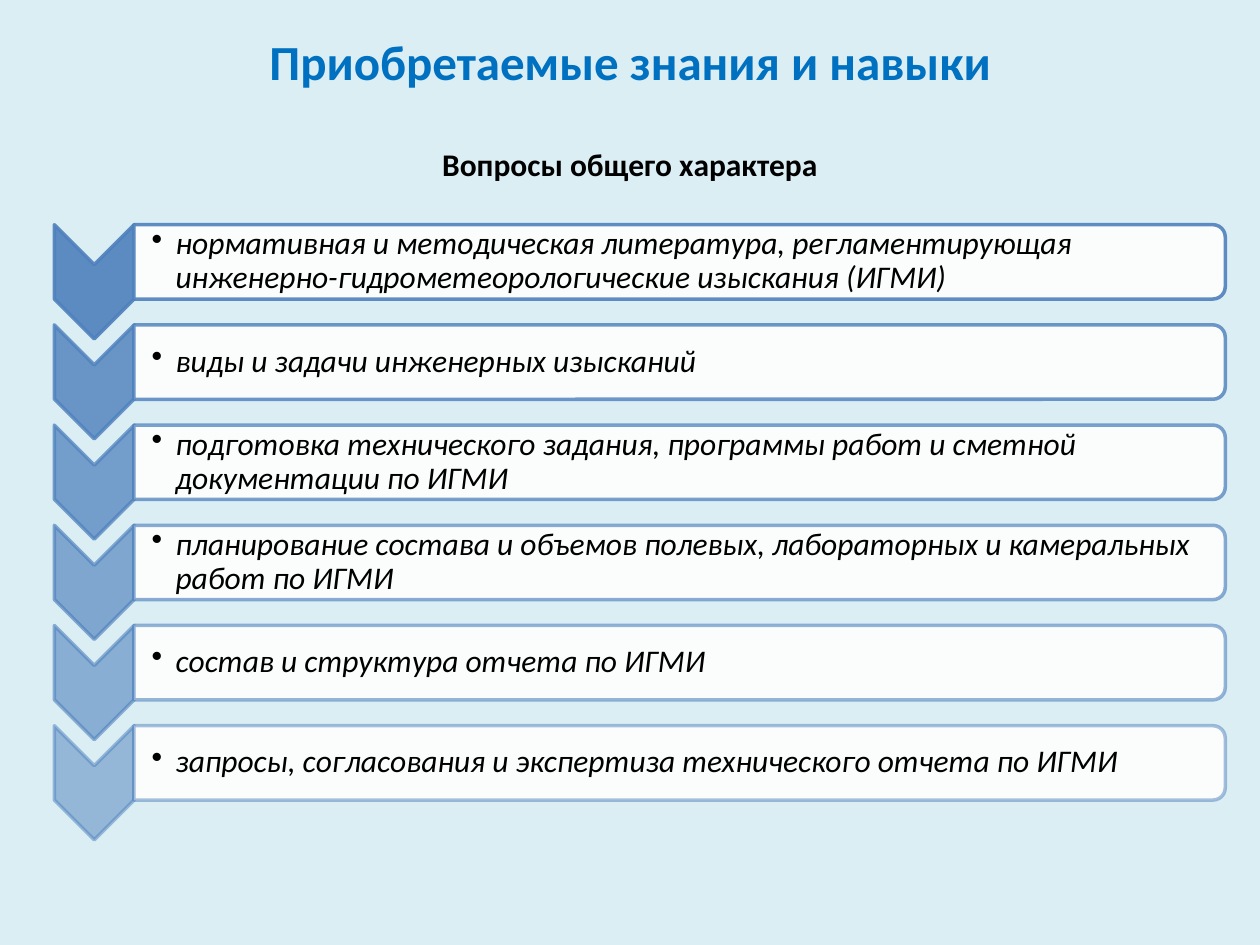
from pptx import Presentation
from pptx.dml.color import RGBColor
from pptx.enum.shapes import MSO_SHAPE as Preset
from pptx.enum.text import MSO_ANCHOR as Anchor, MSO_AUTO_SIZE as AutoSize, PP_ALIGN as Align
from pptx.oxml.ns import qn
from pptx.util import Cm, Pt
from lxml.etree import SubElement

FONT = "Calibri"
ACCENT = "4F81BD"
ROW_STEP = 2.02
FIRST_OPACITY, OPACITY_STEP = 90, 8
SKILLS = [
    "нормативная и методическая литература, регламентирующая инженерно-гидрометеорологические изыскания (ИГМИ)",
    "виды и задачи инженерных изысканий",
    "подготовка технического задания, программы работ и сметной документации по ИГМИ",
    "планирование состава и объемов полевых, лабораторных и камеральных работ по ИГМИ",
    "состав и структура отчета по ИГМИ",
    "запросы, согласования и экспертиза технического отчета по ИГМИ",
]


def color(value):
    return RGBColor.from_string(value)


class SlideBuilder:
    def __init__(self, slide):
        self.slide = slide

    def background(self, value):
        fill = self.slide.background.fill
        fill.solid()
        fill.fore_color.rgb = color(value)

    def place(self, shape, left, top, width, height):
        shape.left, shape.top = Cm(left), Cm(top)
        shape.width, shape.height = Cm(width), Cm(height)

    def set_text(self, shape, text, size, value, bold=False, italic=False, align=Align.LEFT):
        frame = shape.text_frame
        frame.word_wrap = True
        frame.auto_size = AutoSize.NONE
        frame.text = text
        paragraph = frame.paragraphs[0]
        paragraph.alignment = align
        font = paragraph.font
        font.name, font.size = FONT, Pt(size)
        font.bold, font.italic = bold, italic
        font.color.rgb = color(value)
        return paragraph

    def title(self, text):
        title = self.slide.shapes.title
        self.place(title, 0, 0.53, 25.4, 1.4)
        title.text_frame.vertical_anchor = Anchor.MIDDLE
        self.set_text(title, text, 28, "0070C0", bold=True, align=Align.CENTER)

    def subtitle(self, text):
        box = self.slide.shapes.add_textbox(Cm(0), Cm(2.8), Cm(25.4), Cm(1.03))
        self.set_text(box, text, 18, "000000", bold=True, align=Align.CENTER)

    def paint(self, fill, value, opacity):
        fill.solid()
        fill.fore_color.rgb = color(value)
        for node in fill._xPr.iter(qn("a:srgbClr")):
            SubElement(node, qn("a:alpha"), val=str(opacity * 1000))

    def turned_shape(self, preset, center_x, center_y, width, height, fill, fill_opacity, line_opacity):
        shape = self.slide.shapes.add_shape(
            preset, Cm(center_x - width / 2), Cm(center_y - height / 2), Cm(width), Cm(height))
        shape.rotation = 90
        shape.shadow.inherit = False
        self.paint(shape.fill, fill, fill_opacity)
        shape.line.width = Pt(2)
        self.paint(shape.line.fill, ACCENT, line_opacity)

    def bullet(self, text, top):
        box = self.slide.shapes.add_textbox(Cm(2.7), Cm(top), Cm(21.92), Cm(1.35))
        paragraph = self.set_text(box, text, 18, "000000", italic=True)
        paragraph.line_spacing = 0.9
        frame = box.text_frame
        frame.vertical_anchor = Anchor.MIDDLE
        frame.margin_left = Cm(0.36)
        frame.margin_top = frame.margin_right = frame.margin_bottom = Cm(0.03)
        properties = paragraph._p.get_or_add_pPr()
        properties.set("marL", str(Cm(0.48)))
        properties.set("indent", str(-Cm(0.48)))
        marker = properties.makeelement(qn("a:buChar"), {"char": "•"})
        properties.find(qn("a:defRPr")).addprevious(marker)

    def skill(self, index, text):
        offset = index * ROW_STEP
        opacity = FIRST_OPACITY - index * OPACITY_STEP
        self.turned_shape(Preset.CHEVRON, 1.9, 5.68 + offset, 2.3, 1.61, ACCENT, opacity, opacity)
        self.turned_shape(Preset.ROUND_2_SAME_RECTANGLE, 13.7, 5.28 + offset, 1.5, 22,
                          "FFFFFF", 90, opacity)
        self.bullet(text, 4.6 + offset)


def main():
    presentation = Presentation()
    presentation.slide_width, presentation.slide_height = Cm(25.4), Cm(19.05)
    builder = SlideBuilder(presentation.slides.add_slide(presentation.slide_layouts[5]))
    builder.background("DBEEF4")
    builder.title("Приобретаемые знания и навыки")
    for index, text in enumerate(SKILLS):
        builder.skill(index, text)
    builder.subtitle("Вопросы общего характера")
    presentation.save("out.pptx")


if __name__ == "__main__":
    main()
